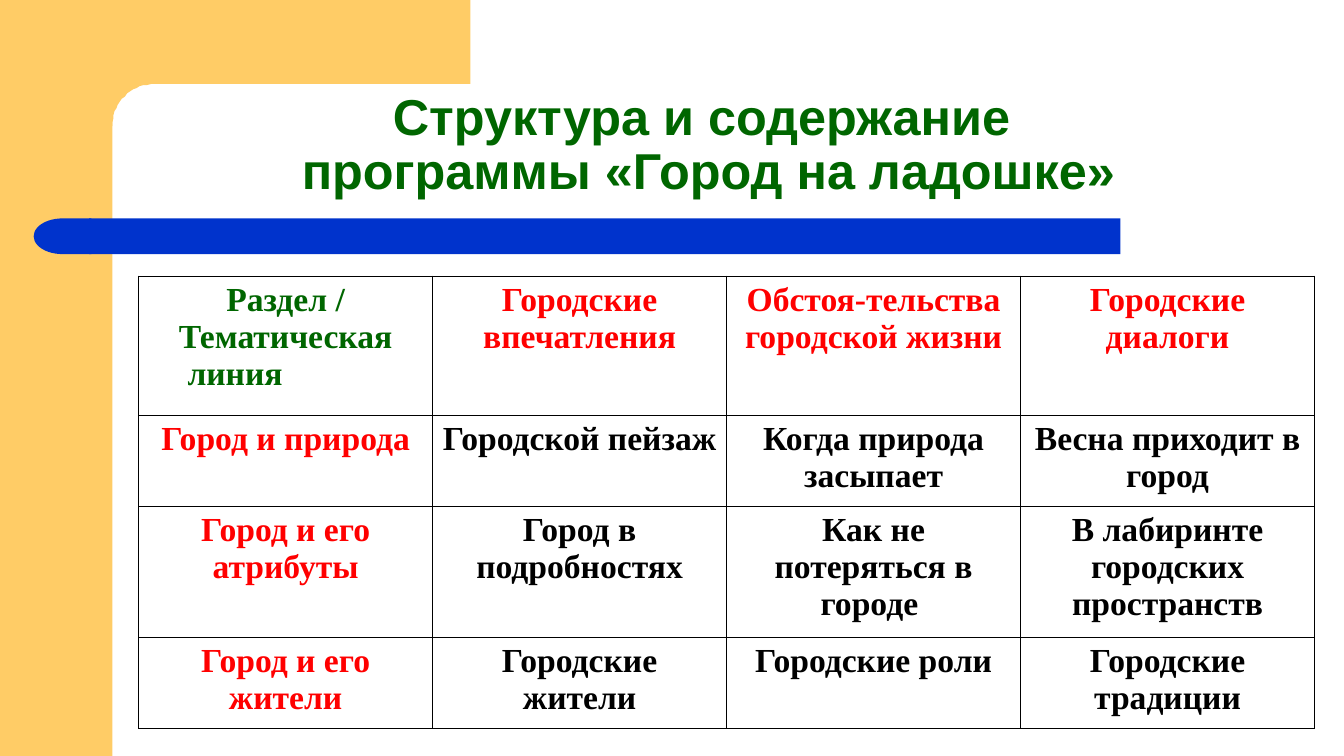
import math
from dataclasses import dataclass

import lxml.etree
import pptx
import pptx.dml.color
import pptx.enum.shapes
import pptx.enum.text
import pptx.oxml.ns
import pptx.util

SCALE = 9525
GOLD, BLUE, GREEN, RED, BLACK = "FFCC66", "0033CC", "006600", "FF0000", "000000"
KIND = pptx.enum.shapes.MSO_SHAPE
ALIGN = pptx.enum.text.PP_ALIGN


@dataclass
class Block:
    kind: int
    left: int
    top: int
    width: int
    height: int
    color: str
    turn: int = 0


BLOCKS = [
    Block(KIND.RECTANGLE, 0, 0, 107, 720, GOLD),
    Block(KIND.RECTANGLE, 85, 208, 982, 34, BLUE),
    Block(KIND.FLOWCHART_DELAY, 32, 208, 55, 34, BLUE, 180),
]
HEIGHTS = [133, 84, 120, 84]
WIDTH = 280
ROWS = [
    ["Раздел /\nТематическая", "Городские впечатления",
     "Обстоя-тельства городской жизни", "Городские диалоги"],
    ["Город и природа", "Городской пейзаж",
     "Когда природа засыпает", "Весна приходит в город"],
    ["Город и его атрибуты", "Город в подробностях",
     "Как не потеряться в городе ", "В лабиринте городских пространств"],
    ["Город и его жители", "Городские жители",
     "Городские роли", "Городские традиции"],
]


def px(count: int) -> int:
    return pptx.util.Emu(count * SCALE)


def paint(fill, color: str) -> None:
    fill.solid()
    fill.fore_color.rgb = pptx.dml.color.RGBColor.from_string(color)


def finish(shape, color: str) -> None:
    shape.shadow.inherit = False
    paint(shape.fill, color)
    shape.line.fill.background()


def write(frame, text: str, *, size: int, font: str, color: str,
          space: float = 1.0, align=ALIGN.CENTER, indent: int = 0,
          more: bool = False) -> None:
    for index, line in enumerate(text.split("\n")):
        para = frame.add_paragraph() if index or more else frame.paragraphs[0]
        para.text = line
        para.alignment = align
        para.line_spacing = space
        if indent:
            para._p.get_or_add_pPr().set("marL", str(px(indent)))
        for run in para.runs:
            run.font.size = pptx.util.Pt(size)
            run.font.name = font
            run.font.bold = True
            paint(run.font.fill, color)


def add_block(slide, block: Block) -> None:
    shape = slide.shapes.add_shape(
        block.kind, px(block.left), px(block.top), px(block.width), px(block.height))
    shape.rotation = block.turn
    finish(shape, block.color)


def add_corner(slide) -> None:
    edge, base, size = 107, 80, 40
    arc = []
    for step in range(19):
        angle = math.radians(step * 5)
        arc.append((edge + size - size * math.sin(angle),
                    base + size - size * math.cos(angle)))
    form = slide.shapes.build_freeform(448, 0, scale=SCALE)
    form.add_line_segments([(448, base), *arc, (64, base + size), (64, 0)], close=True)
    finish(form.convert_to_shape(), GOLD)


def add_title(slide) -> None:
    box = slide.shapes.add_textbox(px(99), px(52), px(1152), px(144))
    frame = box.text_frame
    frame.word_wrap = True
    frame.vertical_anchor = pptx.enum.text.MSO_ANCHOR.BOTTOM
    write(frame, "Структура и содержание \vпрограммы «Город на ладошке»",
          size=36, font="Arial", color=GREEN, space=0.9)


def edge_cell(cell) -> None:
    tag = pptx.oxml.ns.qn
    props = cell._tc.get_or_add_tcPr()
    for side in ("a:lnL", "a:lnR", "a:lnT", "a:lnB"):
        line = lxml.etree.SubElement(props, tag(side), w=str(pptx.util.Pt(1)))
        fill = lxml.etree.SubElement(line, tag("a:solidFill"))
        lxml.etree.SubElement(fill, tag("a:srgbClr"), val=BLACK)
    cell.fill.background()


def add_grid(slide) -> None:
    count = len(ROWS[0])
    table = slide.shapes.add_table(
        len(ROWS), count, px(132), px(263), px(WIDTH * count), px(sum(HEIGHTS))).table
    table.first_row = table.horz_banding = False
    for column in table.columns:
        column.width = px(WIDTH)
    for row, height in zip(table.rows, HEIGHTS):
        row.height = px(height)
    style = {"size": 24, "font": "Times New Roman"}
    for down, texts in enumerate(ROWS):
        for across, text in enumerate(texts):
            cell = table.cell(down, across)
            edge_cell(cell)
            color = BLACK if down and across else RED if down or across else GREEN
            write(cell.text_frame, text, color=color, **style)
    write(table.cell(0, 0).text_frame, "линия", color=GREEN,
          align=ALIGN.LEFT, indent=37, more=True, **style)


def main() -> None:
    deck = pptx.Presentation()
    deck.slide_width, deck.slide_height = px(1280), px(720)
    slide = deck.slides.add_slide(deck.slide_layouts[6])
    add_corner(slide)
    for block in BLOCKS:
        add_block(slide, block)
    add_title(slide)
    add_grid(slide)
    deck.save("out.pptx")


if __name__ == "__main__":
    main()
